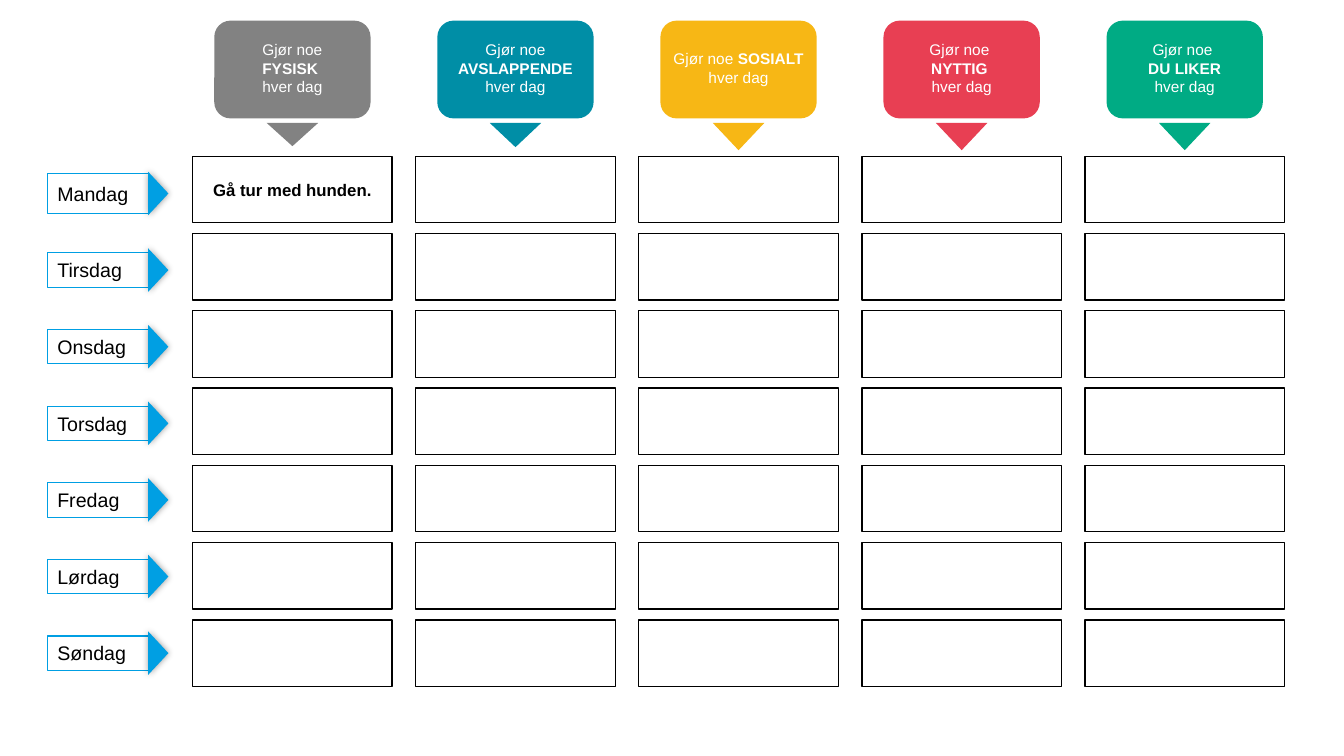
from dataclasses import dataclass

from lxml import etree
from pptx import Presentation
from pptx.dml.color import RGBColor
from pptx.enum.shapes import MSO_SHAPE
from pptx.enum.text import MSO_ANCHOR, MSO_AUTO_SIZE, PP_ALIGN
from pptx.oxml.ns import qn
from pptx.util import Inches, Pt

RECT = MSO_SHAPE.RECTANGLE
ROUNDED = MSO_SHAPE.ROUNDED_RECTANGLE
TRIANGLE = MSO_SHAPE.ISOSCELES_TRIANGLE
MIDDLE = MSO_ANCHOR.MIDDLE
GROW = MSO_AUTO_SIZE.SHAPE_TO_FIT_TEXT
CENTER, LEFT = PP_ALIGN.CENTER, PP_ALIGN.LEFT


@dataclass
class Theme:
    font: str = "Arial"
    black: str = "000000"
    white: str = "FFFFFF"
    gray: str = "828282"
    teal: str = "008EA6"
    yellow: str = "F7B715"
    red: str = "E83F53"
    green: str = "00AB84"
    blue: str = "009FE3"
    header_size: int = 11
    entry_size: int = 12
    day_size: int = 14


theme = Theme()


def add_box(shapes, kind, cx, cy, w, h, fill=None, line=None, line_width=1):
    """Add a shape centred on (cx, cy), in inches."""
    sp = shapes.add_shape(kind, Inches(cx - w / 2), Inches(cy - h / 2), Inches(w), Inches(h))
    sp.shadow.inherit = False
    if fill:
        sp.fill.solid()
        sp.fill.fore_color.rgb = RGBColor.from_string(fill)
    else:
        sp.fill.background()
    if line:
        sp.line.color.rgb = RGBColor.from_string(line)
        sp.line.width = Pt(line_width)
    else:
        sp.line.fill.background()
    return sp


def style_text(tf, size, color, align):
    tf.word_wrap = True
    tf.vertical_anchor = MIDDLE
    for p in tf.paragraphs:
        p.alignment = align
        for r in p.runs:
            r.font.name = theme.font
            r.font.size = Pt(size)
            r.font.color.rgb = RGBColor.from_string(color)


prs = Presentation()
prs.slide_width, prs.slide_height = Inches(13.33), Inches(7.5)
slide = prs.slides.add_slide(prs.slide_layouts[6])

# Activity columns: colour, pointer height, paragraphs made of runs
activities = [
    (theme.gray, 0.23, [["Gjør noe"], ["FYSISK "], ["hver dag"]]),
    (theme.teal, 0.24, [["Gjør noe ", "AVSLAPPENDE"], ["hver dag"]]),
    (theme.yellow, 0.27, [["Gjør noe ", "SOSIALT "], ["hver dag"]]),
    (theme.red, 0.27, [["Gjør noe "], ["NYTTIG "], ["hver dag"]]),
    (theme.green, 0.27, [["Gjør noe "], ["DU LIKER"], ["hver dag"]]),
]
days = ["Mandag", "Tirsdag", "Onsdag", "Torsdag", "Fredag", "Lørdag", "Søndag"]
entries = {(0, 0): "Gå tur med hunden."}
column_centers = [2.9 + 8.85 / 4 * i for i in range(len(activities))]

# Column headers with pointers
for cx, (color, pointer_h, lines) in zip(column_centers, activities):
    header = slide.shapes.add_group_shape()
    add_box(header.shapes, ROUNDED, cx, 0.69, 1.55, 0.97, color)
    pointer = add_box(header.shapes, TRIANGLE, cx, 1.22 + pointer_h / 2, 0.51, pointer_h, color)
    pointer.rotation = 180
    label = header.shapes.add_textbox(Inches(cx - 0.745), Inches(0.23), Inches(1.49), Inches(0.89))
    tf = label.text_frame
    tf.margin_left = tf.margin_right = Inches(0.08)
    for i, line in enumerate(lines):
        p = tf.paragraphs[0] if i == 0 else tf.add_paragraph()
        for text in line:
            r = p.add_run()
            r.text = text
            r.font.bold = text.isupper()
    style_text(tf, theme.header_size, theme.white, CENTER)

# Grid of entry cells
for row in range(len(days)):
    for col, cx in enumerate(column_centers):
        cell = add_box(slide.shapes, RECT, cx, 1.88 + 4.6 / 6 * row, 1.98, 0.66,
                       theme.white, theme.black)
        if (row, col) in entries:
            cell.text_frame.text = entries[row, col]
            style_text(cell.text_frame, theme.entry_size, theme.black, CENTER)
            cell.text_frame.paragraphs[0].runs[0].font.bold = True

# Day labels with arrowheads
for row, day in enumerate(days):
    cy = 1.92 + 0.76 * row
    group = slide.shapes.add_group_shape()
    label = add_box(group.shapes, RECT, 0.97, cy, 1, 0.39 if row == 0 else 0.34,
                    line=theme.blue, line_width=0.75)
    label.text_frame.text = day
    style_text(label.text_frame, theme.day_size, theme.black, LEFT)
    label.text_frame.auto_size = GROW

    arrow = add_box(group.shapes, TRIANGLE, 1.57, cy, 0.43, 0.2, theme.blue)
    arrow.rotation = 90
    effects = arrow._element.spPr.find(qn("a:effectLst"))
    shadow = etree.SubElement(effects, qn("a:outerShdw"), blurRad=str(Pt(5)), dist="0",
                              dir="0", rotWithShape="0")
    shade = etree.SubElement(shadow, qn("a:srgbClr"), val=theme.black)
    etree.SubElement(shade, qn("a:alpha"), val="40000")

prs.save("out.pptx")
